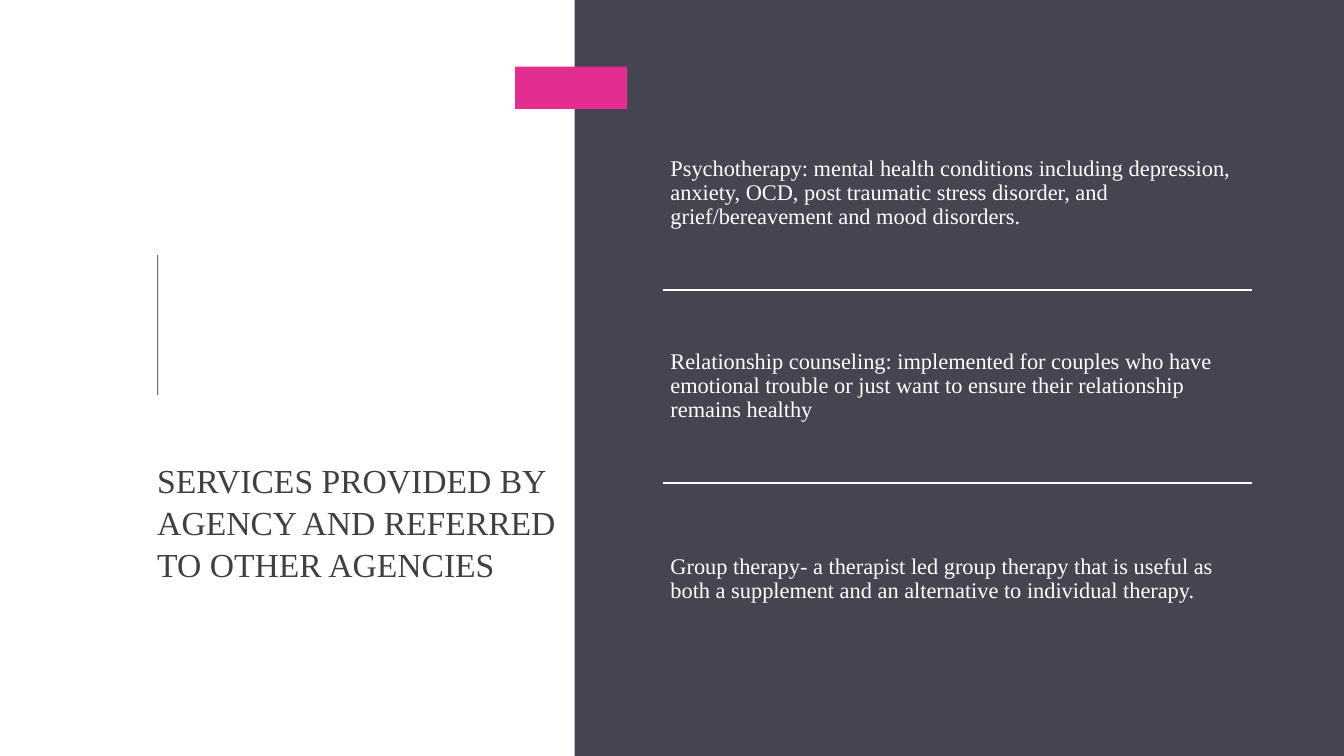
from lxml import etree
from pptx import Presentation
from pptx.dml.color import RGBColor as RGB
from pptx.enum.shapes import MSO_CONNECTOR as Conn, MSO_SHAPE as Shape
from pptx.enum.text import MSO_ANCHOR as Anchor
from pptx.oxml.ns import qn
from pptx.util import Inches, Pt

COLORS = {"panel": "454551", "rule": "24282B", "accent": "E32D91",
          "title": "404040", "white": "FFFFFF"}
SERVICES = [
    "Psychotherapy: mental health conditions including depression, anxiety, OCD, "
    "post traumatic stress disorder, and grief/bereavement and mood disorders.",
    "Relationship counseling: implemented for couples who have emotional trouble "
    "or just want to ensure their relationship remains healthy",
    "Group therapy- a therapist led group therapy that is useful as both a "
    "supplement and an alternative to individual therapy.",
]
LEFT, TOP, WIDTH, STEP = 6.58, 0.96, 5.84, 1.915


class Deck:
    font = "Times New Roman"

    def __init__(self, prs):
        self.slide = prs.slides.add_slide(prs.slide_layouts[6])
        self.shapes = self.slide.shapes

    def color(self, name):
        return RGB.from_string(COLORS[name])

    def rect(self, x, y, w, h, color):
        box = self.shapes.add_shape(Shape.RECTANGLE, *map(Inches, (x, y, w, h)))
        box.shadow.inherit = False
        box.fill.solid()
        box.fill.fore_color.rgb = self.color(color)
        box.line.fill.background()

    def line(self, x1, y1, x2, y2, color, width):
        line = self.shapes.add_connector(
            Conn.STRAIGHT, *map(Inches, (x1, y1, x2, y2)))
        line.line.color.rgb = self.color(color)
        line.line.width = Pt(width)
        etree.SubElement(line._element.spPr, qn("a:effectLst"))

    def text(self, x, y, w, h, words, color, size, anchor, inset, spacing):
        box = self.shapes.add_textbox(*map(Inches, (x, y, w, h)))
        frame = box.text_frame
        pad = Inches(inset)
        style = {"word_wrap": True, "vertical_anchor": anchor,
                 "margin_left": pad, "margin_right": pad,
                 "margin_top": pad, "margin_bottom": pad}
        for key, value in style.items():
            setattr(frame, key, value)
        para = frame.paragraphs[0]
        para.line_spacing = spacing
        run = para.add_run()
        run.text = words
        for key, value in {"name": self.font, "size": Pt(size)}.items():
            setattr(run.font, key, value)
        run.font.color.rgb = self.color(color)


def main():
    prs = Presentation()
    prs.slide_width, prs.slide_height = Inches(13.33), Inches(7.5)
    deck = Deck(prs)
    deck.rect(5.7, 0, 7.63, 7.5, "panel")
    deck.rect(1.56, 2.53, 0.01, 1.39, "rule")
    deck.rect(5.11, 0.66, 1.11, 0.42, "accent")
    deck.text(1.56, 3.14, 4, 2.66,
              "SERVICES PROVIDED BY AGENCY AND REFERRED TO OTHER AGENCIES",
              "title", 24, Anchor.BOTTOM, 0, 1.05)
    for i, words in enumerate(SERVICES):
        y = TOP + i * STEP
        if i:
            deck.line(LEFT, y, LEFT + WIDTH, y, "white", 1.75)
        deck.text(LEFT, y, WIDTH, STEP, words, "white", 16, Anchor.MIDDLE, 0.07, 0.9)
    prs.save("out.pptx")


if __name__ == "__main__":
    main()
